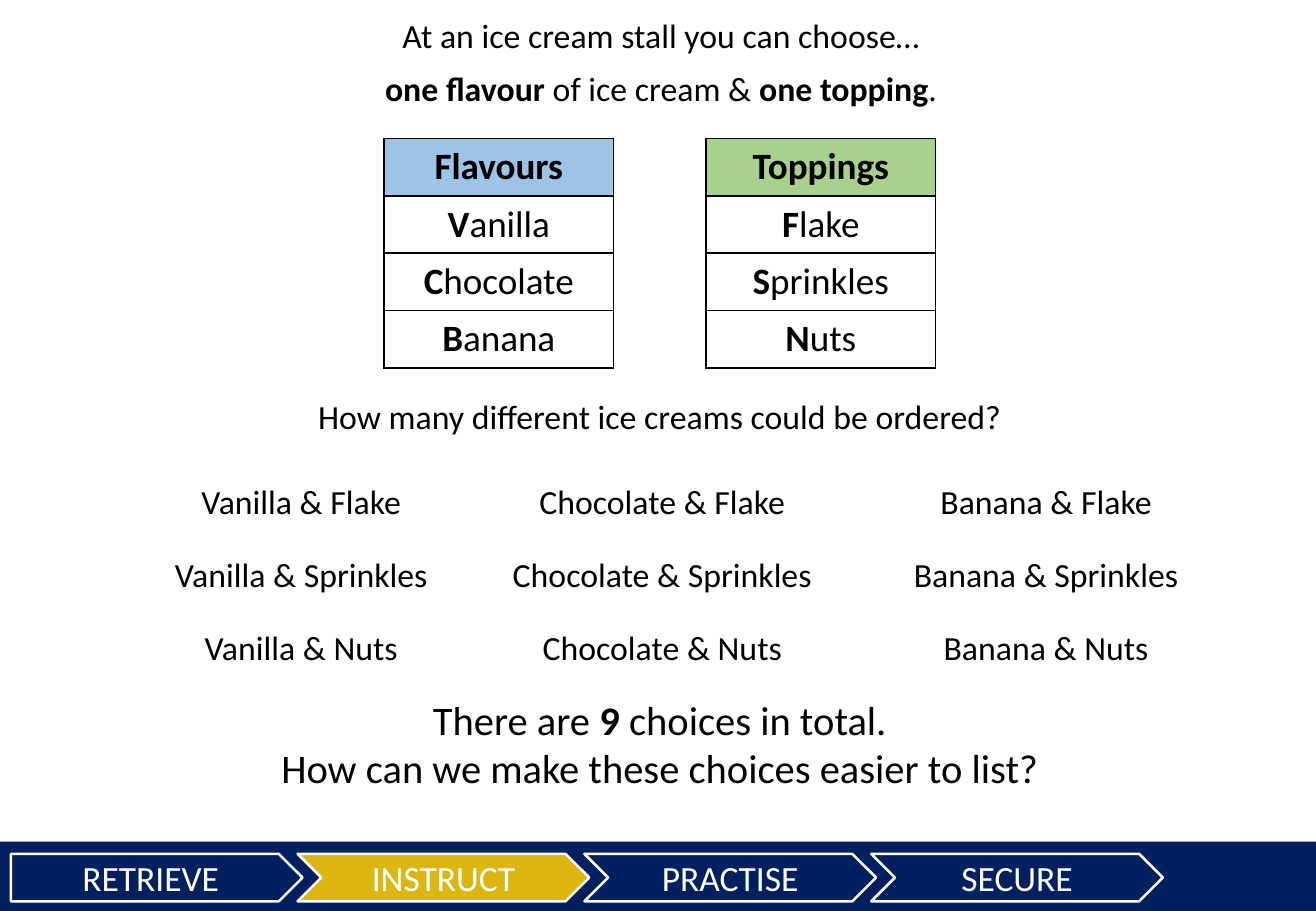
import lxml.etree
import pptx
import pptx.dml.color
import pptx.enum.shapes
import pptx.enum.text
import pptx.oxml.ns
import pptx.util

Inches = pptx.util.Inches
Pt = pptx.util.Pt
SHAPE = pptx.enum.shapes.MSO_SHAPE
CENTER = pptx.enum.text.PP_ALIGN.CENTER
TOP = pptx.enum.text.MSO_ANCHOR.TOP
MIDDLE = pptx.enum.text.MSO_ANCHOR.MIDDLE

NAVY, GOLD, WHITE, BLACK = "002060", "DCB50E", "FFFFFF", "000000"
BLUE, GREEN = "9DC3E6", "A9D18E"


def rgb(value):
    return pptx.dml.color.RGBColor.from_string(value)


def write(p, runs, size, color=BLACK):
    p.alignment = CENTER
    for text, bold in runs:
        r = p.add_run()
        r.text = text
        r.font.color.rgb = rgb(color)
        for name, value in {"name": "Calibri", "size": Pt(size), "bold": bold}.items():
            setattr(r.font, name, value)


def fill_text(sp, box, lines, size, gap=0):
    for name, value in zip(("left", "top", "width", "height"), box):
        setattr(sp, name, Inches(value))
    tf = sp.text_frame
    frame = {
        "word_wrap": True,
        "auto_size": pptx.enum.text.MSO_AUTO_SIZE.NONE,
        "vertical_anchor": TOP,
    }
    for name, value in frame.items():
        setattr(tf, name, value)
    for i, runs in enumerate(lines):
        p = tf.add_paragraph() if i else tf.paragraphs[0]
        if i:
            p.space_before = Pt(gap)
        write(p, runs, size)


def add_text(s, box, lines, size):
    sp = s.shapes.add_textbox(*map(Inches, box))
    fill_text(sp, box, lines, size)


def add_block(s, kind, box, fill, line=None, label=None):
    sp = s.shapes.add_shape(kind, *map(Inches, box))
    sp.shadow.inherit = False
    sp.fill.solid()
    sp.fill.fore_color.rgb = rgb(fill)
    if line:
        sp.line.color.rgb = rgb(line)
        sp.line.width = Pt(1.5)
    else:
        sp.line.fill.background()
    if label:
        sp.text_frame.vertical_anchor = MIDDLE
        write(sp.text_frame.paragraphs[0], [(label, False)], 21, WHITE)


def add_borders(cell):
    tc_pr = cell._tc.get_or_add_tcPr()
    for side in ("lnL", "lnR", "lnT", "lnB"):
        ln = lxml.etree.SubElement(tc_pr, pptx.oxml.ns.qn("a:" + side), w=str(Pt(1)))
        solid = lxml.etree.SubElement(ln, pptx.oxml.ns.qn("a:solidFill"))
        lxml.etree.SubElement(solid, pptx.oxml.ns.qn("a:srgbClr"), val=BLACK)


def add_menu(s, left, heading, color, items):
    rows = len(items) + 1
    box = (left, 1.14, 1.89, 0.47 * rows)
    table = s.shapes.add_table(rows, 1, *map(Inches, box)).table
    contents = [[(heading, True)]] + [[(t[0], True), (t[1:], False)] for t in items]
    for i, runs in enumerate(contents):
        table.rows[i].height = Inches(0.47)
        cell = table.cell(i, 0)
        add_borders(cell)
        cell.fill.solid()
        cell.fill.fore_color.rgb = rgb(WHITE if i else color)
        cell.vertical_anchor = MIDDLE
        write(cell.text_frame.paragraphs[0], runs, 22)


def add_stages(s):
    add_block(s, SHAPE.RECTANGLE, (0, 6.93, 10.83, 0.57), NAVY)
    for i, label in enumerate(("RETRIEVE", "INSTRUCT", "PRACTISE", "SECURE")):
        kind = SHAPE.CHEVRON if i else SHAPE.PENTAGON
        fill = GOLD if label == "INSTRUCT" else NAVY
        add_block(s, kind, (0.09 + 2.36 * i, 7.03, 2.4, 0.39), fill, WHITE, label)


def main():
    prs = pptx.Presentation()
    prs.slide_width, prs.slide_height = Inches(10.83), Inches(7.5)
    s = prs.slides.add_slide(prs.slide_layouts[5])
    add_stages(s)

    intro = [
        [("At an ice cream stall you can choose…", False)],
        [("one flavour", True), (" of ice cream & ", False),
         ("one topping", True), (".", False)],
    ]
    fill_text(s.shapes.title, (2.94, 0.07, 5, 0.88), intro, 20, gap=7.3)

    flavours = ("Vanilla", "Chocolate", "Banana")
    toppings = ("Flake", "Sprinkles", "Nuts")
    add_menu(s, 3.16, "Flavours", BLUE, flavours)
    add_menu(s, 5.81, "Toppings", GREEN, toppings)

    question = "How many different ice creams could be ordered?"
    add_text(s, (2.23, 3.21, 6.4, 0.44), [[(question, False)]], 20)

    for flavour, center in zip(flavours, (2.48, 5.45, 8.61)):
        for row, topping in enumerate(toppings):
            box = (center - 1.45, 3.91 + 0.6 * row, 2.9, 0.44)
            add_text(s, box, [[(f"{flavour} & {topping}", False)]], 20)

    summary = [
        [("There are ", False), ("9", True), (" choices in total.", False)],
        [("How can we make these choices easier to list?", False)],
    ]
    add_text(s, (1.93, 5.67, 7, 0.91), summary, 24)
    prs.save("out.pptx")


if __name__ == "__main__":
    main()
